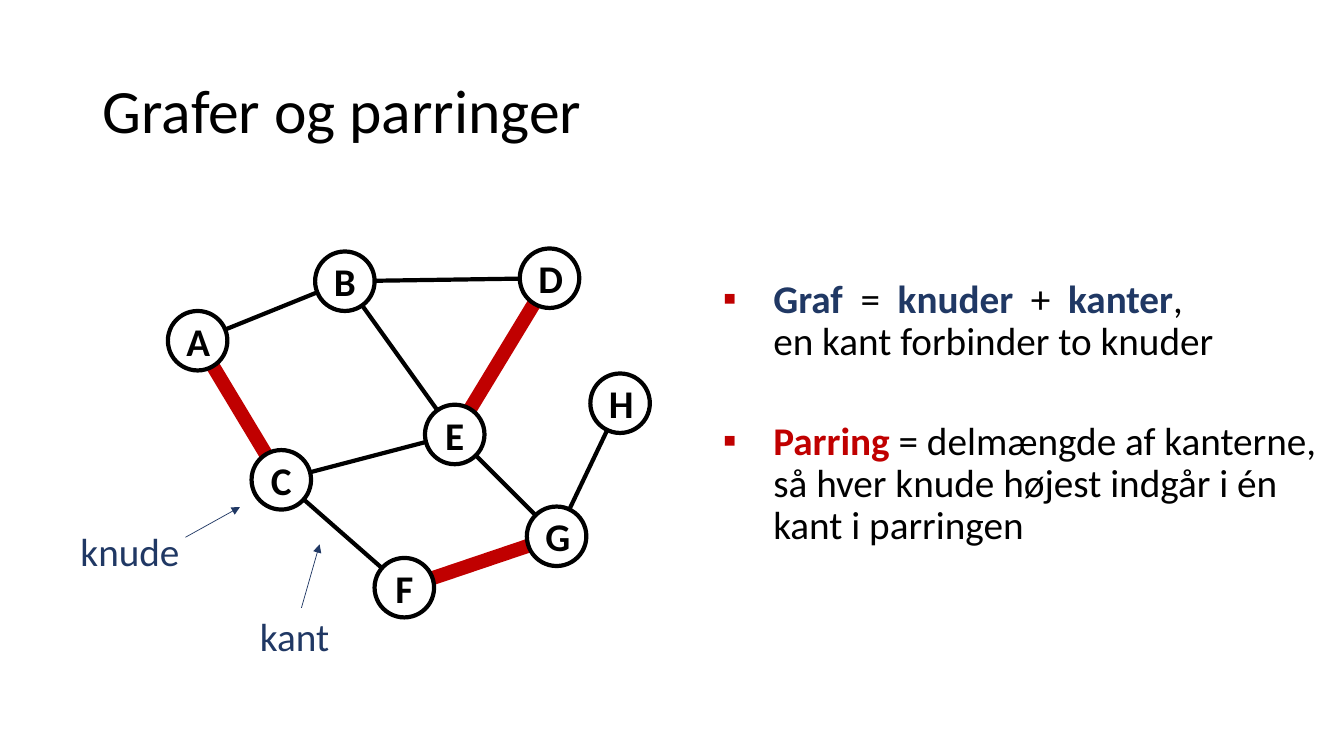
from lxml.etree import SubElement
from pptx import Presentation
from pptx.dml.color import RGBColor
from pptx.enum.shapes import MSO_CONNECTOR, MSO_SHAPE
from pptx.enum.text import MSO_ANCHOR as Anchor, MSO_AUTO_SIZE as AutoSize, PP_ALIGN as Align
from pptx.oxml.ns import qn
from pptx.util import Inches, Pt

BLACK = RGBColor(0x00, 0x00, 0x00)
WHITE = RGBColor(0xFF, 0xFF, 0xFF)
RED = RGBColor(0xC0, 0x00, 0x00)
NAVY = RGBColor(0x20, 0x38, 0x64)
FONT = "Calibri"
TEXT_SIZE = 28
NODE_SIZE = 0.59

# Content
TITLE = "Grafer og parringer"
NODES = {  # centre of each node
    "A": (1.96, 3.38), "B": (3.42, 2.79), "C": (2.79, 4.76), "D": (5.45, 2.76),
    "E": (4.51, 4.31), "F": (4.01, 5.83), "G": (5.52, 5.32), "H": (6.15, 4.0),
}
EDGES = ["EC", "CA", "EB", "DB", "ED", "GH", "FC", "GF", "GE", "AB"]
MATCHING = ["CA", "ED", "GF"]
DEFINITIONS = [  # (space before, [(text, highlight colour or None)])
    (10, [("Graf", NAVY), ("  =  ", None), ("knuder", NAVY), ("  +  ", None),
          ("kanter", NAVY), (",", None), ("\n", None),
          ("en kant forbinder to knuder", None)]),
    (41, [("Parring", RED),
          (" = delmængde af kanterne, så hver knude højest indgår i én kant i parringen", None)]),
]
CALLOUTS = [  # text, box, arrow start, arrow tip
    ("knude", (0.7, 5.18, 1.43, 0.57), (1.84, 5.33), (2.38, 5.03)),
    ("kant", (2.48, 6.03, 1.02, 0.57), (2.99, 6.03), (3.17, 5.4)),
]


def inches(values):
    return [Inches(value) for value in values]


def place(shape, box):
    shape.left, shape.top, shape.width, shape.height = inches(box)


def style(span, color, size=TEXT_SIZE, bold=False):
    span.font.name = FONT
    span.font.size = Pt(size)
    span.font.bold = bold
    span.font.color.rgb = color


def draw_line(page, start, end, color, width):
    line = page.shapes.add_connector(MSO_CONNECTOR.STRAIGHT, *inches(start + end))
    line.line.color.rgb = color
    line.line.width = Pt(width)
    SubElement(line._element.spPr, qn("a:effectLst"))
    return line


def add_title(page):
    title = page.shapes.title
    place(title, (0.92, 0.4, 11.5, 1.45))
    frame = title.text_frame
    frame.text = TITLE
    frame.vertical_anchor = Anchor.MIDDLE
    para = frame.paragraphs[0]
    para.alignment = Align.LEFT
    para.line_spacing = 0.9
    style(para.runs[0], BLACK, 44)


def add_graph(page):
    for edges, color, width in ((EDGES, BLACK, 3), (MATCHING, RED, 10)):
        for start, end in edges:
            draw_line(page, NODES[start], NODES[end], color, width)
    for name, (x, y) in NODES.items():
        box = (x - NODE_SIZE / 2, y - NODE_SIZE / 2, NODE_SIZE, NODE_SIZE)
        node = page.shapes.add_shape(MSO_SHAPE.OVAL, *inches(box))
        node.shadow.inherit = False
        node.fill.solid()
        node.fill.fore_color.rgb = WHITE
        node.line.color.rgb = BLACK
        node.line.width = Pt(3)
        frame = node.text_frame
        frame.text = name
        frame.vertical_anchor = Anchor.MIDDLE
        para = frame.paragraphs[0]
        para.alignment = Align.CENTER
        style(para.runs[0], BLACK, bold=True)


def add_bullet(para):
    properties = para._p.get_or_add_pPr()
    properties.set("marL", str(Inches(0.5)))
    properties.set("indent", str(-Inches(0.5)))
    color = SubElement(properties, qn("a:buClr"))
    SubElement(color, qn("a:srgbClr"), val=str(RED))
    SubElement(properties, qn("a:buFont"), typeface="Arial")
    SubElement(properties, qn("a:buChar"), char="▪")


def add_definitions(page):
    body = page.placeholders[1]
    place(body, (7.07, 2.72, 6.11, 3.78))
    frame = body.text_frame
    frame.auto_size = AutoSize.NONE
    for index, (space, spans) in enumerate(DEFINITIONS):
        para = frame.add_paragraph() if index else frame.paragraphs[0]
        para.line_spacing = 0.9
        para.space_before = Pt(space)
        add_bullet(para)
        for text, highlight in spans:
            if text == "\n":
                para.add_line_break()
                continue
            span = para.add_run()
            span.text = text
            style(span, highlight or BLACK, bold=highlight is not None)
        # A line break carries its own text size
        for line_break in para._p.findall(qn("a:br")):
            SubElement(line_break, qn("a:rPr"), sz=str(TEXT_SIZE * 100))


def add_callouts(page):
    for text, box, start, tip in CALLOUTS:
        label = page.shapes.add_textbox(*inches(box))
        frame = label.text_frame
        frame.word_wrap = True
        frame.auto_size = AutoSize.SHAPE_TO_FIT_TEXT
        frame.text = text
        style(frame.paragraphs[0].runs[0], NAVY)
        arrow = draw_line(page, start, tip, NAVY, 0.5)
        SubElement(arrow.line._get_or_add_ln(), qn("a:tailEnd"), type="triangle")


def main():
    deck = Presentation()
    deck.slide_width, deck.slide_height = Inches(13.33), Inches(7.5)
    page = deck.slides.add_slide(deck.slide_layouts[1])
    add_title(page)
    add_graph(page)
    add_definitions(page)
    add_callouts(page)
    deck.save("out.pptx")


if __name__ == "__main__":
    main()
